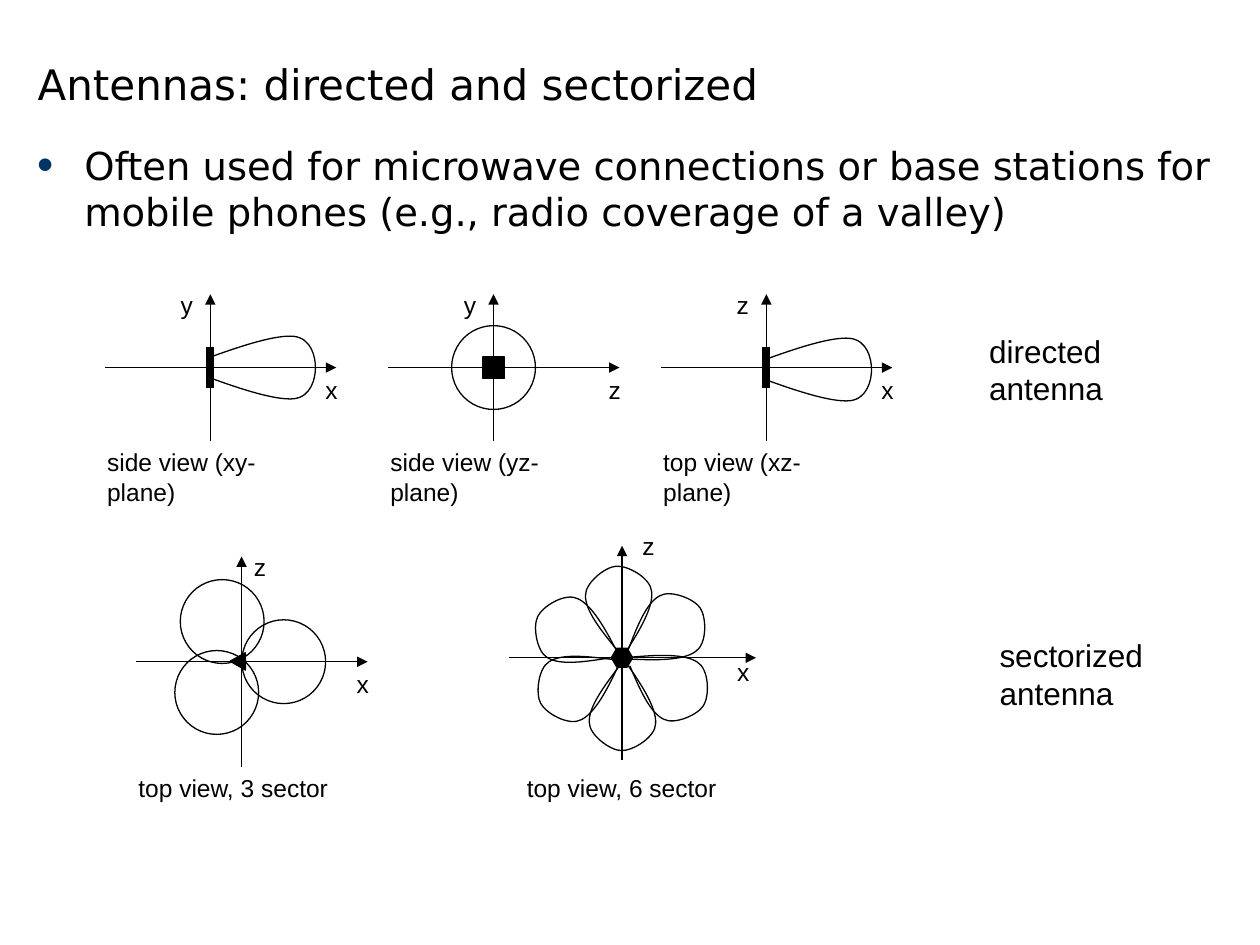
import pptx
import pptx.util
import pptx.dml.color
import pptx.enum.shapes
import pptx.enum.text
from pptx.oxml.xmlchemy import OxmlElement

Cm, Pt = pptx.util.Cm, pptx.util.Pt
MSO = pptx.enum.shapes.MSO_SHAPE
ANCHOR = pptx.enum.text.MSO_ANCHOR
BLACK = pptx.dml.color.RGBColor(0x00, 0x00, 0x00)
BULLET = pptx.dml.color.RGBColor(0x00, 0x33, 0x66)

# Content; all lengths in cm
TITLE = "Antennas: directed and sectorized"
BODY = ("Often used for microwave connections or base stations for mobile "
        "phones (e.g., radio coverage of a valley)")
SIDE_NOTES = [
    (19.69, 6.56, 2.9, ["directed", "antenna"]),
    (19.9, 12.7, 3.5, ["sectorized", "antenna"]),
]

# Diagrams: origin, axis reach (left, right, up, down), then each text
# with its offset from the origin
DIRECTED_REACH = (2.12, 2.54, 1.48, 1.48)
ORIGINS = [(4.24, 7.41), (9.95, 7.41), (15.45, 7.41)]
DIRECTED_TEXTS = [
    ("x", "y", "side view (xy-plane)"),
    ("z", "y", "side view (yz-plane)"),
    ("x", "z", "top view (xz-plane)"),
]
DIRECTED_OFFSETS = [(2.07, 0.03), (-0.85, -1.69), (-2.33, 1.48)]
THREE, SIX = (4.87, 13.34), (12.54, 13.26)
DIAGRAMS = [
    (origin, DIRECTED_REACH, list(zip(texts, DIRECTED_OFFSETS)))
    for origin, texts in zip(ORIGINS, DIRECTED_TEXTS)
] + [
    (THREE, (2.12, 2.54, 2.12, 2.12),
     [("x", (2.07, 0.03)), ("z", (0, -2.34)), ("top view, 3 sector", (-2.33, 2.12))]),
    (SIX, (2.28, 2.7, 2.26, 2.06),
     [("x", (2.07, -0.13)), ("z", (0.16, -2.67)), ("top view, 6 sector", (-2.17, 2.2))]),
]

# Radiation patterns: start point, then three control points per curve
UPPER_LOBE = [(0, -0.21), (0.66, -0.45), (1.32, -0.66), (1.68, -0.63),
              (2.04, -0.59), (2.12, -0.21), (2.12, 0)]
LOBE = UPPER_LOBE + [(x, -y) for x, y in UPPER_LOBE[-2::-1]]
LOBE_PLACES = [(ORIGINS[0], 0), (ORIGINS[2], 0.04)]
PETAL = [(0.72, 0.58), (0.22, 0.66), (-0.29, 0.74), (-0.55, 0.58),
         (-0.77, 0.46), (-0.85, -0.05), (-0.75, -0.25),
         (-0.65, -0.46), (-0.19, -0.74), (0.06, -0.61),
         (0.34, -0.48), (0.6, -0.03), (0.85, 0.46)]
# Petal centre from the origin, rotation, vertical direction
PETALS = [((-0.95, -0.58), 0, 1), ((0.04, -1.07), 60, 1), ((0.98, -0.48), 120, 1),
          ((-0.9, 0.64), 357.8, -1), ((0.11, 1.09), 297.8, -1), ((1.03, 0.46), 237.8, -1)]
CIRCLE = 1.69
CIRCLES = [(ORIGINS[1], (0, 0)), (THREE, (0.85, 0)),
           (THREE, (-0.5, 0.62)), (THREE, (-0.39, -0.81))]

prs = pptx.Presentation()
prs.slide_width, prs.slide_height = Cm(25.4), Cm(19.05)
s = prs.slides.add_slide(prs.slide_layouts[6])


def element(parent, tag, **attributes):
    el = OxmlElement(tag)
    for key, value in attributes.items():
        el.set(key, value)
    parent.append(el)
    return el


def add_text(x, y, w, h, lines, size, font="Arial", anchor=ANCHOR.TOP):
    sp = s.shapes.add_textbox(Cm(x), Cm(y), Cm(w), Cm(h))
    tf = sp.text_frame
    for name, value in {"word_wrap": True, "vertical_anchor": anchor}.items():
        setattr(tf, name, value)
    for i, line in enumerate(lines):
        p = tf.paragraphs[0] if i == 0 else tf.add_paragraph()
        r = p.add_run()
        r.text = line
        for name, value in {"name": font, "size": Pt(size)}.items():
            setattr(r.font, name, value)
        r.font.color.rgb = BLACK
    return tf


def add_line(x1, y1, x2, y2, width=0.75, arrow=True):
    c = s.shapes.add_connector(pptx.enum.shapes.MSO_CONNECTOR.STRAIGHT,
                               Cm(x1), Cm(y1), Cm(x2), Cm(y2))
    c.line.color.rgb, c.line.width = BLACK, Pt(width)
    if arrow:
        element(c.line._get_or_add_ln(), "a:tailEnd", type="triangle")
    element(c._element.spPr, "a:effectLst")


def outline(sp, filled=False):
    sp.shadow.inherit = False
    sp.line.color.rgb, sp.line.width = BLACK, Pt(0.75)
    if filled:
        sp.fill.solid()
        sp.fill.fore_color.rgb = BLACK
    else:
        sp.fill.background()
    return sp


def add_centred(kind, origin, offset, w, h, filled):
    x, y = origin[0] + offset[0] - w / 2, origin[1] + offset[1] - h / 2
    return outline(s.shapes.add_shape(kind, Cm(x), Cm(y), Cm(w), Cm(h)), filled)


def add_curve(x, y, points):
    """Build an outline whose segments, three by three, become cubic curves."""
    dots = [(Cm(x + dx), Cm(y + dy)) for dx, dy in points]
    fb = s.shapes.build_freeform(*dots[0])
    fb.add_line_segments(dots[1:], close=False)
    sp = outline(fb.convert_to_shape())
    route = sp._element.spPr.xpath(".//a:path")[0]
    segments = route.xpath("a:lnTo")
    for i in range(0, len(segments), 3):
        curve = element(route, "a:cubicBezTo")
        for segment in segments[i:i + 3]:
            curve.append(segment[0])
            route.remove(segment)
    return sp


# Title and bullet
add_text(0.51, 0, 16.79, 2.33, [TITLE], 24, "DejaVu Sans", ANCHOR.BOTTOM)
p = add_text(0.5, 2.73, 24.41, 14.86, [BODY], 22, "DejaVu Sans").paragraphs[0]
pPr = p._p.get_or_add_pPr()
pPr.set("marL", str(Cm(0.95)))
pPr.set("indent", str(Cm(-0.95)))
element(element(pPr, "a:buClr"), "a:srgbClr", val=str(BULLET))
element(pPr, "a:buSzPct", val="120000")
element(pPr, "a:buFont", typeface="Arial")
element(pPr, "a:buChar", char="•")

# Axes with labels and captions
for (x, y), (left, right, up, down), texts in DIAGRAMS:
    add_line(x, y + down, x, y - up)
    add_line(x - left, y, x + right, y)
    for text, (dx, dy) in texts:
        w = 0.76 if len(text) == 1 else 4.57
        add_text(x + dx, y + dy, w, 0.84, [text], 14)

# Directed lobes and their antenna bars
for (x, y), shift in LOBE_PLACES:
    add_line(x, y - 0.42, x, y + 0.42, 4.5, arrow=False)
    add_curve(x, y + shift, LOBE)

# Circular patterns
for origin, offset in CIRCLES:
    add_centred(MSO.OVAL, origin, offset, CIRCLE, CIRCLE, False)

# Antennas at the origins
add_centred(MSO.RECTANGLE, ORIGINS[1], (0, 0), 0.43, 0.43, True)
add_centred(MSO.ISOSCELES_TRIANGLE, THREE, (0, -0.05), 0.36, 0.3, True).rotation = 30
add_centred(MSO.HEXAGON, SIX, (0, 0), 0.43, 0.38, True).adjustments[0] = 0.29

# Six petals
for (cx, cy), angle, way in PETALS:
    petal = add_curve(SIX[0] + cx, SIX[1] + cy, [(x, way * y) for x, y in PETAL])
    petal.rotation = angle

# Row names on the right
for x, y, w, lines in SIDE_NOTES:
    add_text(x, y, w, 1.78, lines, 18)

prs.save("out.pptx")
